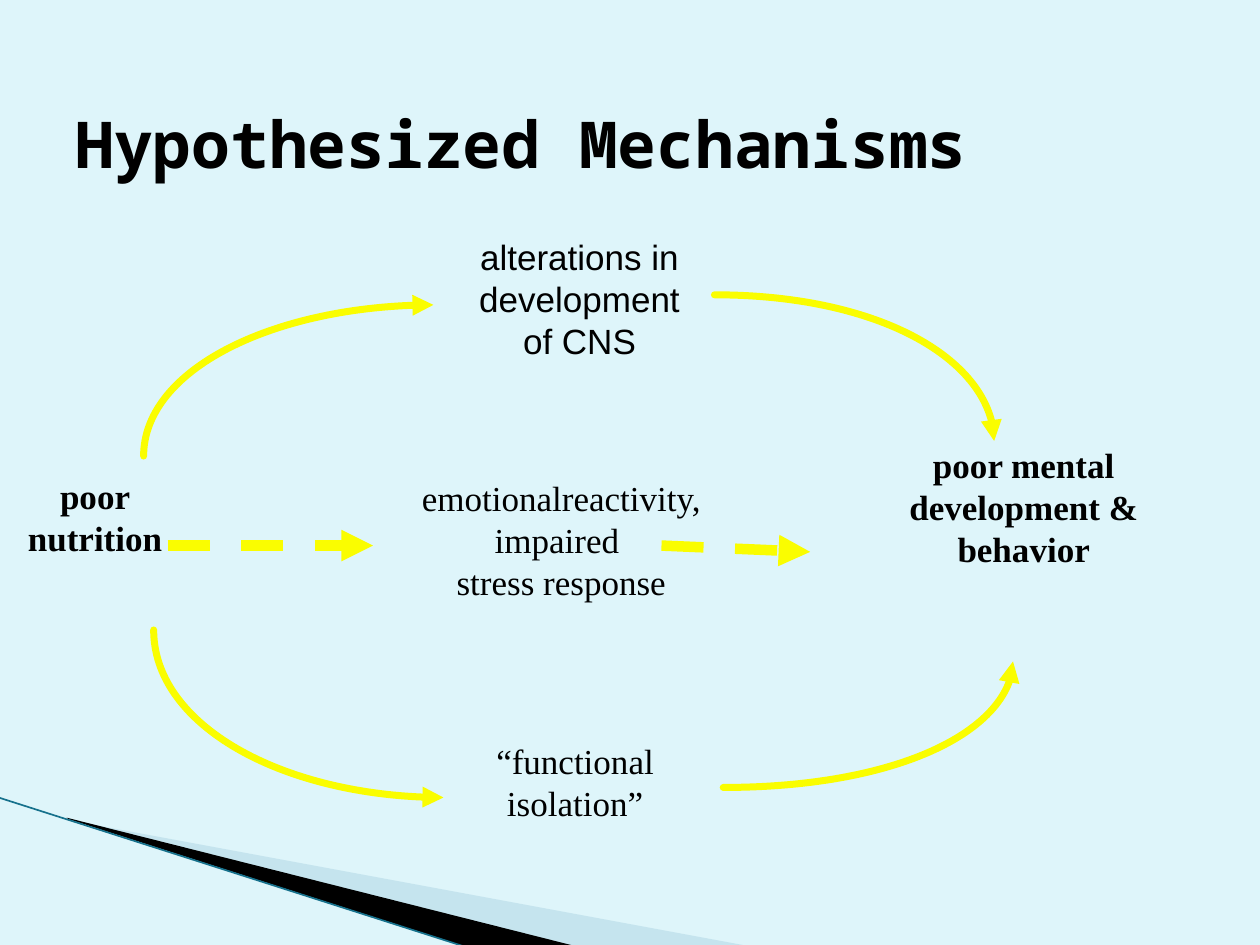
import pptx
import pptx.util
import pptx.dml.color
import pptx.enum.dml
import pptx.enum.shapes
import pptx.enum.text
import pptx.oxml
import pptx.oxml.ns

deck = pptx.Presentation()
deck.slide_width = pptx.util.Inches(10)
deck.slide_height = pptx.util.Inches(7.5)
slide = deck.slides.add_slide(deck.slide_layouts[6])
shapes = slide.shapes
col = deck.slide_width / 100    # grid of 100 columns
row = deck.slide_height / 75    # and 75 rows
NS = pptx.oxml.ns.nsdecls("a")


def paint(target, code):
    target.solid()
    target.fore_color.rgb = pptx.dml.color.RGBColor.from_string(code)


def write(text, x, y, w, h, font="Times New Roman", size=20, bold=False,
          wrap=True, align="CENTER", anchor="TOP", grow=True):
    box = shapes.add_textbox(int(x * col), int(y * row), int(w * col), int(h * row))
    frame = box.text_frame
    frame.text = text
    frame.word_wrap = wrap
    frame.vertical_anchor = pptx.enum.text.MSO_ANCHOR[anchor]
    if grow:
        frame.auto_size = pptx.enum.text.MSO_AUTO_SIZE.SHAPE_TO_FIT_TEXT
    for para in frame.paragraphs:
        para.alignment = pptx.enum.text.PP_ALIGN[align]
        for run in para.runs:
            run.font.name = font
            run.font.size = pptx.util.Pt(size)
            run.font.bold = bold
            paint(run.font.fill, "000000")


# Background
paint(slide.background.fill, "DEF5FA")

# Corner wedges
wedges = [
    ("A0CBDC", 40, [(5.5, 65.1), (59.5, 75.1), (45.6, 75.1), (5.5, 65)]),
    ("000000", 100, [(5.3, 64.9), (45.7, 75.1), (37.2, 75.2), (5.4, 65)]),
]
for code, alpha, pts in wedges:
    spots = [(int(x * col), int(y * row)) for x, y in pts]
    pen = shapes.build_freeform(*spots[0])
    pen.add_line_segments(spots[1:], close=True)
    wedge = pen.convert_to_shape()
    wedge.shadow.inherit = False
    wedge.line.fill.background()
    paint(wedge.fill, code)
    if alpha < 100:
        tint = wedge._element.spPr.find(".//" + pptx.oxml.ns.qn("a:srgbClr"))
        tint.append(pptx.oxml.parse_xml(f'<a:alpha {NS} val="{alpha * 1000}"/>'))

# Labels
write("poor\nnutrition", 1.2, 37.2, 12.7, 7.7, bold=True, wrap=False)
write("poor mental\ndevelopment &\nbehavior", 65, 34.7, 32.5, 11.1, bold=True)
write("alterations in\ndevelopment\nof CNS", 36.8, 18.2, 18.4, 11, font="Arial", wrap=False)
write("“functional\nisolation”", 38, 58.2, 15.3, 7.6, wrap=False)
write("emotionalreactivity,\nimpaired \nstress response", 30.2, 37.3, 28.7, 11.1)

# Quarter-ellipse arrows: start, end, and whether they set off upright
arcs = [
    (11.4, 36.2, 34.4, 24.2, True),
    (56.7, 23.4, 78.9, 35, False),
    (12.2, 50, 35.2, 63.3, True),
    (57.4, 62.5, 80.4, 52.5, False),
]
bend = 0.55
lines = []
for x1, y1, x2, y2, upright in arcs:
    a, b = (int(x1 * col), int(y1 * row)), (int(x2 * col), int(y2 * row))
    pen = shapes.build_freeform(*a)
    pen.add_line_segments([b], close=False)
    arc = pen.convert_to_shape()
    arc.fill.background()
    # Bend the straight segment toward the corner of its box
    turn = (a[0], b[1]) if upright else (b[0], a[1])
    knots = [[p + bend * (t - p) for p, t in zip(end, turn)] for end in (a, b)] + [b]
    marks = "".join(f'<a:pt x="{int(x - arc.left)}" y="{int(y - arc.top)}"/>' for x, y in knots)
    step = arc._element.spPr.find(".//" + pptx.oxml.ns.qn("a:lnTo"))
    step.getparent().replace(
        step, pptx.oxml.parse_xml(f"<a:cubicBezTo {NS}>{marks}</a:cubicBezTo>"))
    lines.append((arc, "FAFD00", 4, True))

# Straight lines: the wedge edge and two dashed arrows
links = [
    (-0.1, 63.3, 37.1, 75.2, "16718C", 0.95, False),
    (13.3, 43.3, 29.6, 43.3, "FAFD00", 6, True),
    (52.5, 43.3, 64.3, 43.8, "FAFD00", 6, True),
]
for x1, y1, x2, y2, code, width, arrow in links:
    link = shapes.add_connector(pptx.enum.shapes.MSO_CONNECTOR.STRAIGHT,
                                int(x1 * col), int(y1 * row), int(x2 * col), int(y2 * row))
    if arrow:
        link.line.dash_style = pptx.enum.dml.MSO_LINE.DASH
    lines.append((link, code, width, arrow))

# Stroke, arrowhead and no shadow for every line
for item, code, width, arrow in lines:
    paint(item.line.fill, code)
    item.line.width = pptx.util.Pt(width)
    if arrow:
        stroke = item.line._get_or_add_ln()
        if width == 4:
            stroke.set("cap", "rnd")
        stroke.append(pptx.oxml.parse_xml(f"<a:round {NS}/>"))
        stroke.append(pptx.oxml.parse_xml(f'<a:tailEnd {NS} type="triangle"/>'))
    item._element.spPr.append(pptx.oxml.parse_xml(f"<a:effectLst {NS}/>"))

# Title
write("Hypothesized Mechanisms", 5, 7.7, 90.8, 7.3, font="Noto Sans Mono", size=36.9,
      bold=True, align="LEFT", anchor="MIDDLE", grow=False)

deck.save("out.pptx")
